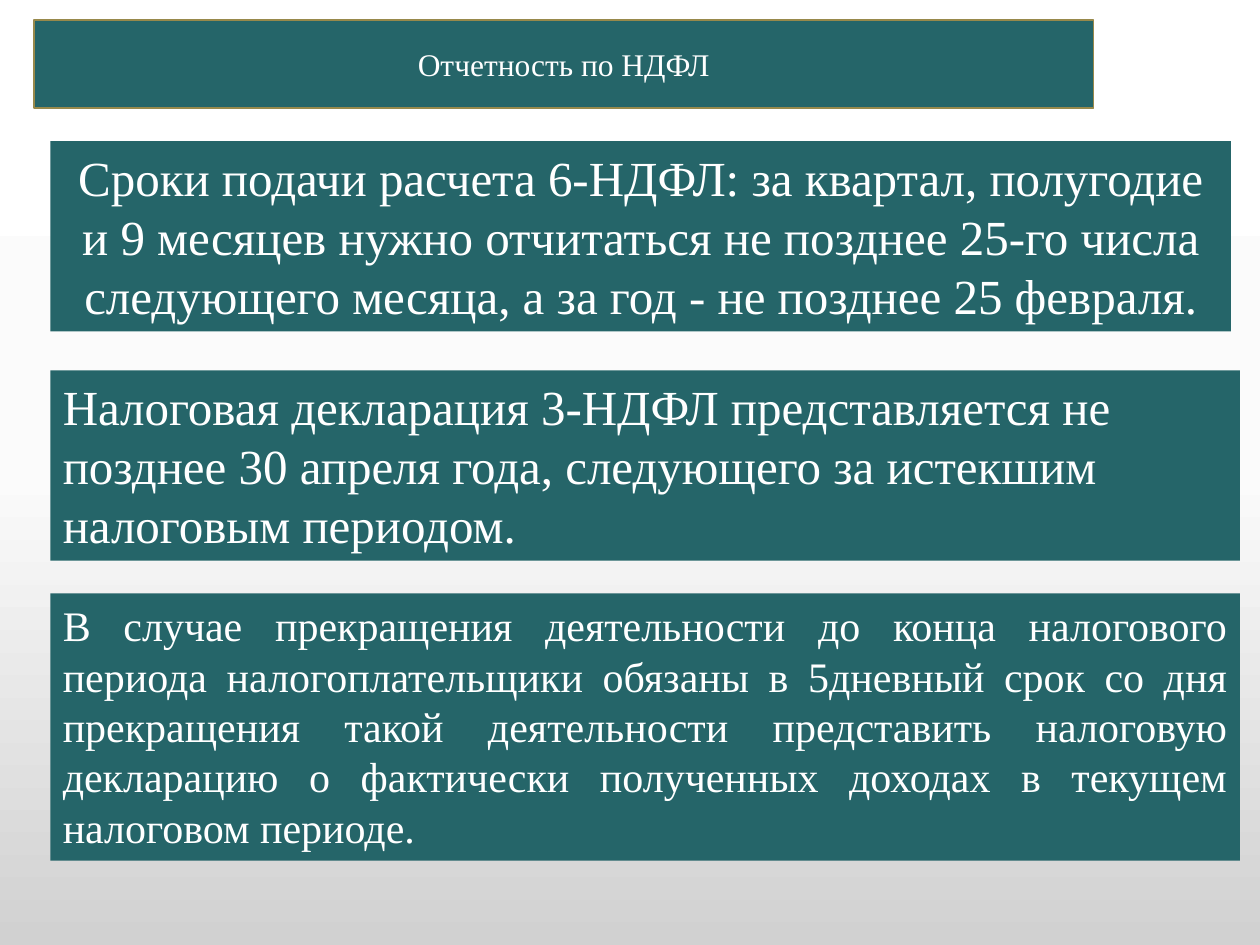
from copy import deepcopy

from lxml import etree
from pptx import Presentation
from pptx.dml.color import RGBColor
from pptx.enum.text import MSO_ANCHOR, MSO_AUTO_SIZE, PP_ALIGN
from pptx.oxml.ns import qn
from pptx.util import Inches, Pt

TEAL = RGBColor(0x25, 0x65, 0x69)
OLIVE = RGBColor(0x98, 0x89, 0x4B)
WHITE = RGBColor(0xFF, 0xFF, 0xFF)
BACKGROUND_STOPS = [
    (0, WHITE),
    (0.5, RGBColor(0xFB, 0xFB, 0xFB)),
    (1, RGBColor(0xD1, 0xD1, 0xD1)),
]
FONT = "Times New Roman"
TITLE_ONLY = 5
LEFT, CENTER, JUSTIFY = PP_ALIGN.LEFT, PP_ALIGN.CENTER, PP_ALIGN.JUSTIFY
TOP, MIDDLE = MSO_ANCHOR.TOP, MSO_ANCHOR.MIDDLE
NO_FIT, GROW = MSO_AUTO_SIZE.NONE, MSO_AUTO_SIZE.SHAPE_TO_FIT_TEXT

PANEL_LEFT = 0.4
# Top, width, height, font size, alignment, text
PANELS = [
    (1.12, 9.37, 1.51, 28, CENTER,
     "Сроки подачи расчета 6-НДФЛ: за квартал, полугодие и 9 месяцев нужно "
     "отчитаться не позднее 25-го числа следующего месяца, а за год - не "
     "позднее 25 февраля."),
    (2.94, 9.44, 1.51, 28, LEFT,
     "Налоговая декларация 3-НДФЛ представляется не позднее 30 апреля года, "
     "следующего за истекшим налоговым периодом."),
    (4.71, 9.44, 2.12, 24, JUSTIFY,
     "В случае прекращения деятельности до конца налогового периода "
     "налогоплательщики обязаны в 5дневный срок со дня прекращения такой "
     "деятельности представить налоговую декларацию о фактически полученных "
     "доходах в текущем налоговом периоде."),
]


def write_text(shape, text, *, size, align=LEFT, anchor=TOP, fit=NO_FIT):
    frame = shape.text_frame
    frame.word_wrap = True
    frame.auto_size = fit
    frame.vertical_anchor = anchor
    paragraph = frame.paragraphs[0]
    paragraph.alignment = align
    run = paragraph.add_run()
    run.text = text
    run.font.name = FONT
    run.font.size = Pt(size)
    run.font.color.rgb = WHITE


class SlideBuilder:
    def __init__(self, slide, fill=TEAL, outline=OLIVE):
        self.slide = slide
        self.fill = fill
        self.outline = outline

    def paint(self, shape):
        shape.fill.solid()
        shape.fill.fore_color.rgb = self.fill

    def background(self, stops):
        fill = self.slide.background.fill
        fill.gradient()
        fill.gradient_angle = 270  # counter-clockwise, so top to bottom
        # The default gradient has two stops: add the missing ones
        stop_list = next(self.slide.element.iter(qn("a:gsLst")))
        while len(stop_list) < len(stops):
            stop_list.append(deepcopy(stop_list[0]))
        for stop, (position, color) in zip(fill.gradient_stops, stops):
            stop.position = position
            stop.color.rgb = color

    def title_arrow(self, text, left, top, width, height, size):
        title = self.slide.shapes.title
        title.left, title.top = Inches(left), Inches(top)
        title.width, title.height = Inches(width), Inches(height)
        # Give the placeholder a pentagon arrow outline
        geometry = etree.Element(qn("a:prstGeom"), prst="homePlate")
        etree.SubElement(geometry, qn("a:avLst"))
        title.element.spPr.find(qn("a:xfrm")).addnext(geometry)
        self.paint(title)
        title.line.color.rgb = self.outline
        title.line.width = Pt(1)
        write_text(title, text, size=size, align=CENTER, anchor=MIDDLE)

    def panel(self, text, left, top, width, height, size, align):
        box = self.slide.shapes.add_textbox(
            Inches(left), Inches(top), Inches(width), Inches(height))
        self.paint(box)
        write_text(box, text, size=size, align=align, fit=GROW)


def main():
    presentation = Presentation()
    presentation.slide_width = Inches(10)
    presentation.slide_height = Inches(7.5)
    layout = presentation.slide_layouts[TITLE_ONLY]
    builder = SlideBuilder(presentation.slides.add_slide(layout))

    # Background and heading
    builder.background(BACKGROUND_STOPS)
    builder.title_arrow("Отчетность по НДФЛ", 0.27, 0.16, 8.41, 0.7, size=18)

    # Filing deadlines
    for top, width, height, size, align, text in PANELS:
        builder.panel(text, PANEL_LEFT, top, width, height, size, align)

    presentation.save("out.pptx")


if __name__ == "__main__":
    main()
